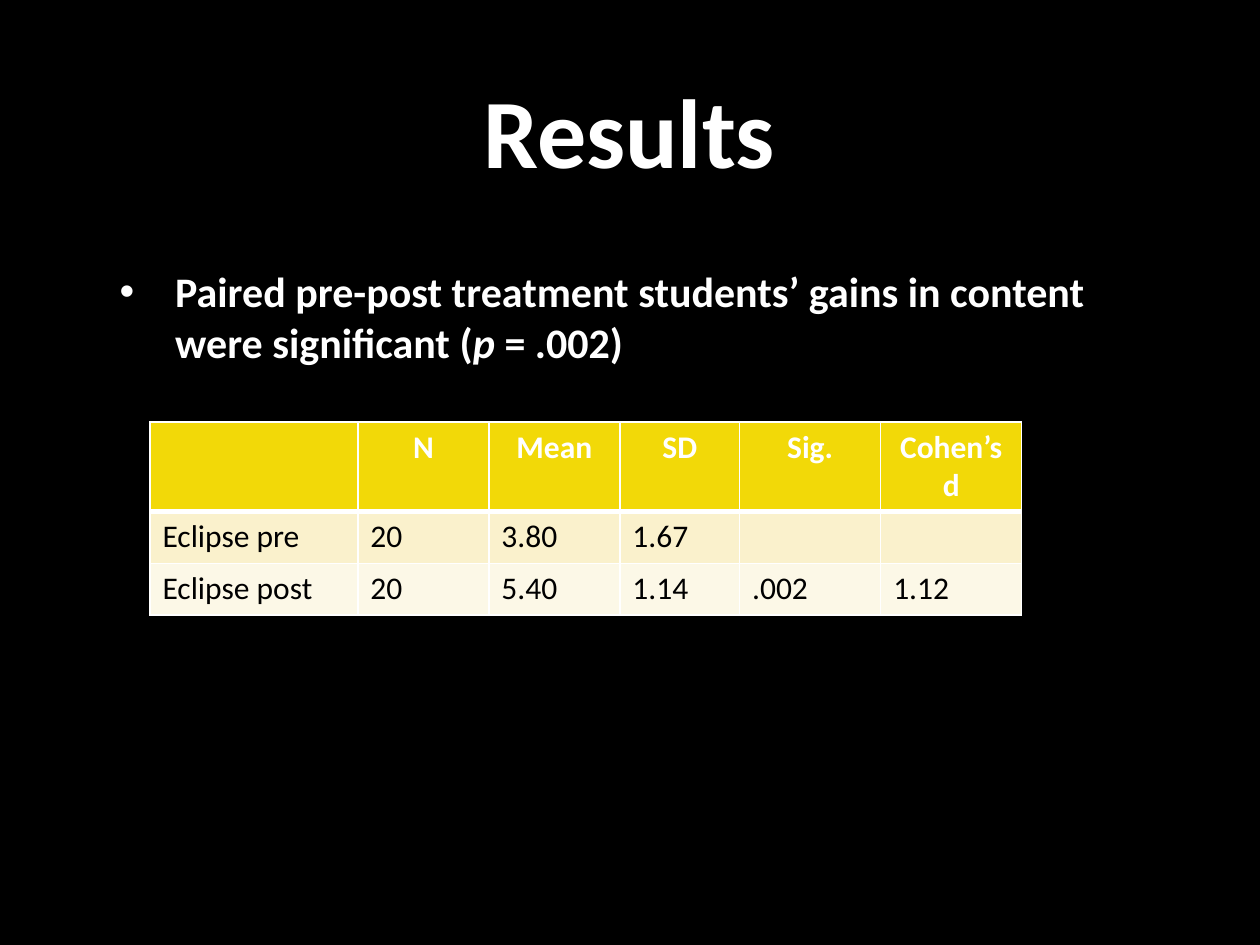
from pptx import Presentation
from pptx import util as u
from pptx.dml.color import RGBColor
from pptx.enum import text
from pptx.oxml.ns import qn
from lxml import etree

FONT = "Calibri"
WHITE, BLACK = "FFFFFF", "000000"
ROW_FILLS = ["F2D908", "FAF1CC", "FCF8E7"]
COLUMN_WIDTHS = [1.65, 1.04, 1.04, 0.95, 1.12, 1.12]
ROW_HEIGHTS = [0.7, 0.41, 0.41]
RESULTS = [
    ["", "N", "Mean", "SD", "Sig.", "Cohen’s d"],
    ["Eclipse pre", "20", "3.80", "1.67", "", ""],
    ["Eclipse post", "20", "5.40", "1.14", ".002", "1.12"],
]


def set_color(color_format, value):
    color_format.rgb = RGBColor.from_string(value)


def paint(fill, value):
    fill.solid()
    set_color(fill.fore_color, value)


def add_span(para, words, size, color, bold=False, italic=False):
    span = para.add_run()
    span.text = words
    font = span.font
    font.name, font.size = FONT, u.Pt(size)
    font.bold, font.italic = bold, italic
    set_color(font.color, color)


def place(box, left, top, width, height, anchor):
    box.left, box.top = u.Inches(left), u.Inches(top)
    box.width, box.height = u.Inches(width), u.Inches(height)
    box.text_frame.word_wrap = True
    box.text_frame.auto_size = text.MSO_AUTO_SIZE.NONE
    box.text_frame.vertical_anchor = anchor
    return box.text_frame.paragraphs[0]


def add_title(page):
    para = place(page.shapes.title, 0.85, 0.12, 8.29, 1.81, text.MSO_ANCHOR.MIDDLE)
    para.alignment = text.PP_ALIGN.CENTER
    add_span(para, "Results", 56, WHITE, bold=True)


def add_finding(page):
    para = place(page.placeholders[1], 0.85, 2.06, 8.29, 1.23, text.MSO_ANCHOR.TOP)
    properties = para._p.get_or_add_pPr()
    indent = u.Inches(0.44)
    properties.set("marL", str(indent))
    properties.set("indent", str(-indent))
    etree.SubElement(properties, qn("a:buFont"), typeface="Arial")
    etree.SubElement(properties, qn("a:buChar"), char="•")
    para.space_before = u.Pt(0)
    spans = [
        ("Paired pre-post treatment students’ gains in content were significant (", False),
        ("p", True),
        (" = .002)", False),
    ]
    for words, italic in spans:
        add_span(para, words, 24, WHITE, bold=True, italic=italic)


def add_borders(cell, top, bottom):
    """Draw white cell edges; top and bottom are widths in points."""
    properties = cell._tc.get_or_add_tcPr()
    for side, width in (("L", 1), ("R", 1), ("T", top), ("B", bottom)):
        line = etree.SubElement(properties, qn(f"a:ln{side}"), w=str(u.Pt(width)))
        fill = etree.SubElement(line, qn("a:solidFill"))
        etree.SubElement(fill, qn("a:srgbClr"), val=WHITE)


def add_results_table(page):
    frame = page.shapes.add_table(
        len(RESULTS), len(COLUMN_WIDTHS), u.Inches(1.19), u.Inches(3.35),
        u.Inches(sum(COLUMN_WIDTHS)), u.Inches(sum(ROW_HEIGHTS)))
    table = frame.table
    for column, width in zip(table.columns, COLUMN_WIDTHS):
        column.width = u.Inches(width)
    for index, (row, height) in enumerate(zip(table.rows, ROW_HEIGHTS)):
        row.height = u.Inches(height)
        header = index == 0
        for cell, words in zip(row.cells, RESULTS[index]):
            add_borders(cell, top=3 if index == 1 else 1, bottom=3 if header else 1)
            paint(cell.fill, ROW_FILLS[index])
            para = cell.text_frame.paragraphs[0]
            if header:
                para.alignment = text.PP_ALIGN.CENTER
            if words:
                add_span(para, words, 18, WHITE if header else BLACK, bold=header)


def main():
    deck = Presentation()
    deck.slide_width, deck.slide_height = u.Inches(10), u.Inches(7.5)
    page = deck.slides.add_slide(deck.slide_layouts[1])
    paint(page.background.fill, BLACK)
    add_title(page)
    add_finding(page)
    add_results_table(page)
    deck.save("out.pptx")


if __name__ == "__main__":
    main()
